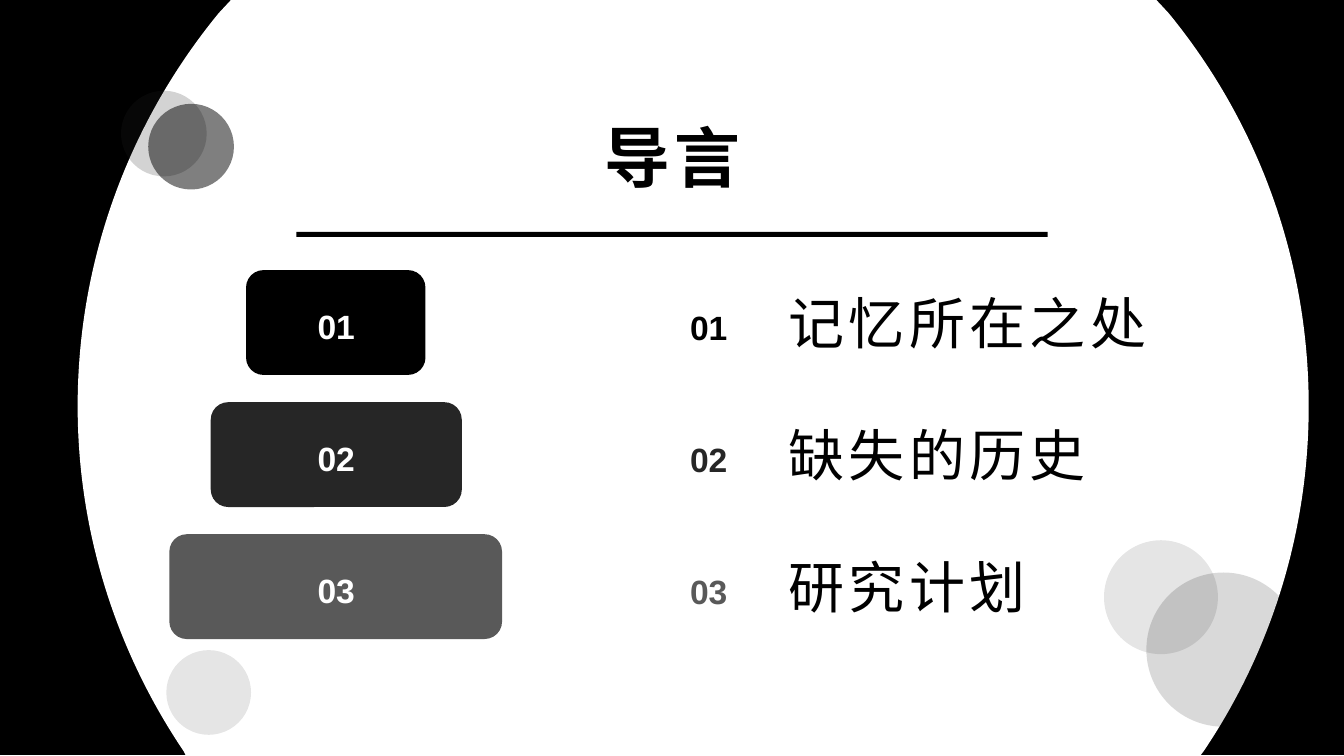
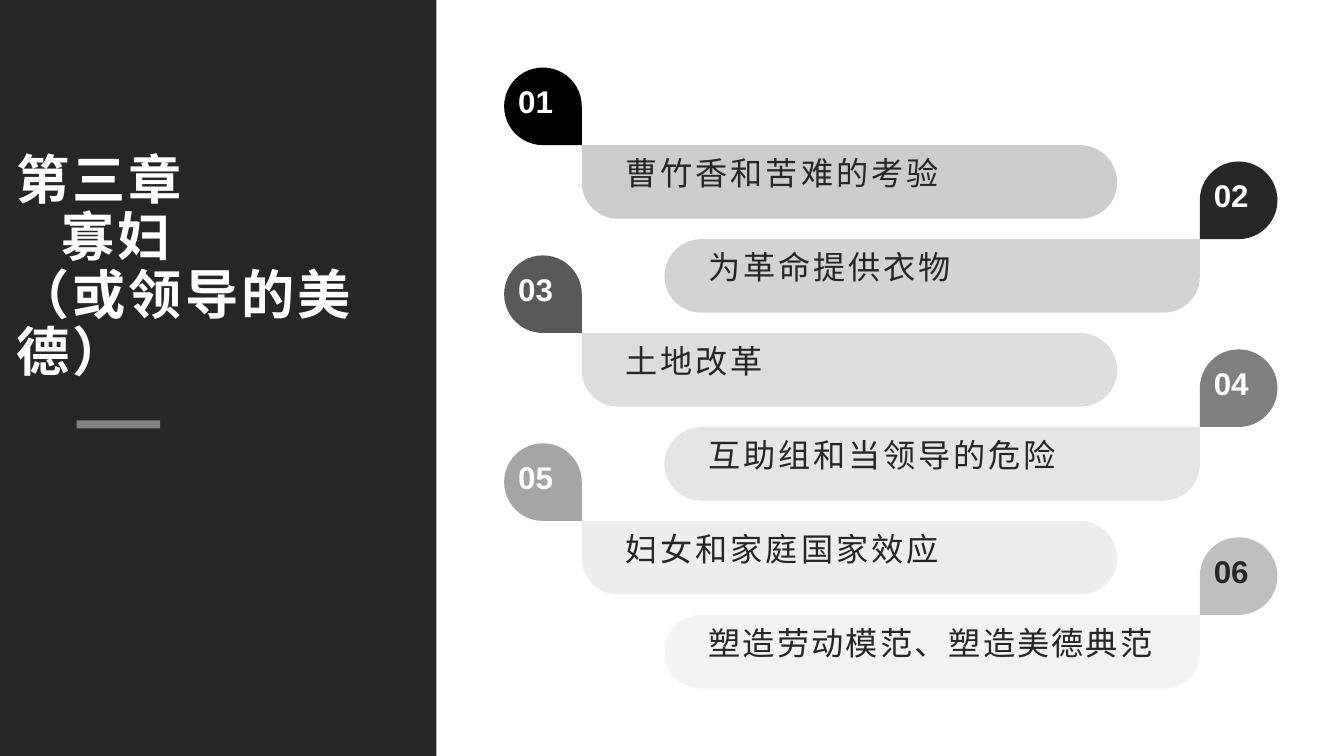
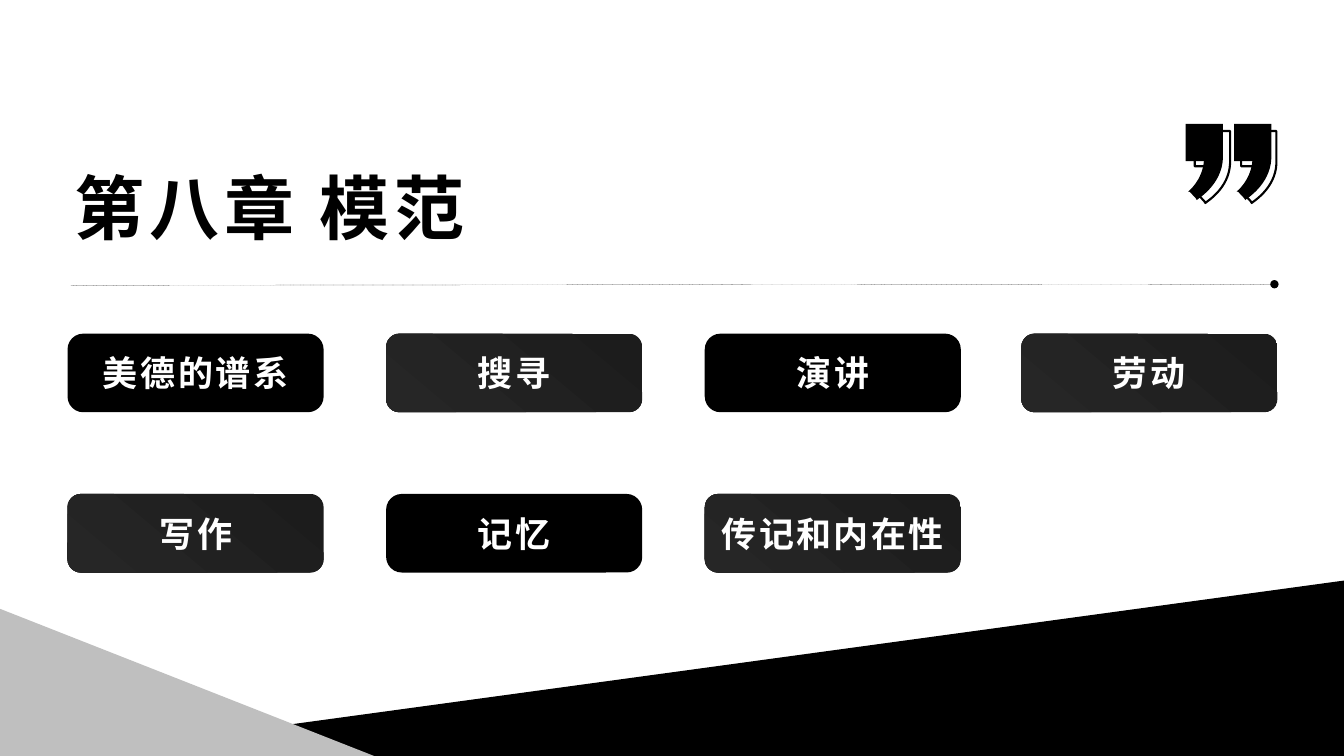
from lxml import etree
from pptx import Presentation
from pptx import util as u
from pptx.dml.color import RGBColor
from pptx.enum import shapes as s
from pptx.enum import text as t
from pptx.oxml.ns import qn

# Shared style
BLACK, DARK, MID, WHITE, SILVER = "000000", "262626", "595959", "FFFFFF", "BFBFBF"
LATIN, HAN = "Arial", "Noto Sans CJK SC"
TITLE = dict(font=HAN, bold=True, inset=(0.07, 0.03))
NUMBER = dict(bold=True)
KIND, ANCHOR, ALIGN = s.MSO_SHAPE, t.MSO_ANCHOR, t.PP_ALIGN

# Content: introduction (label, text, colour, block left, block width)
INTRO = [
    ("01", "记忆所在之处", BLACK, 2.44, 1.78),
    ("02", "缺失的历史", DARK, 2.09, 2.49),
    ("03", "研究计划", MID, 1.68, 3.30),
]
DISC = [("M", 2.3, -0.01), ("L", 11.46, -0.01), ("L", 11.59, 0.13),
        ("C", 12.46, 1.19, 12.98, 2.55, 12.98, 4.03),
        ("C", 12.98, 5.29, 12.6, 6.47, 11.94, 7.45), ("L", 11.91, 7.49),
        ("L", 1.84, 7.49), ("L", 1.82, 7.45),
        ("C", 1.16, 6.47, 0.77, 5.29, 0.77, 4.03),
        ("C", 0.77, 2.55, 1.3, 1.19, 2.17, 0.13)]
# Bubbles: left, top, diameter, colour, opacity
BUBBLES = [(1.2, 0.9, 0.85, DARK, 20), (1.47, 1.03, 0.85, BLACK, 50),
           (1.65, 6.45, 0.84, BLACK, 10), (11.37, 5.68, 1.53, BLACK, 15),
           (10.95, 5.36, 1.13, BLACK, 10)]

# Content: chapter three (text, colour, number colour, letter spacing)
CHAPTER_THREE = ["第三章", "寡妇", "（或领导的美德）"]
SECTIONS = [
    ("曹竹香和苦难的考验", BLACK, WHITE, 2),
    ("为革命提供衣物", DARK, WHITE, 2),
    ("土地改革", MID, WHITE, 2),
    ("互助组和当领导的危险", "7F7F7F", WHITE, 2),
    ("妇女和家庭国家效应", "A5A5A5", WHITE, 2),
    ("塑造劳动模范、塑造美德典范", SILVER, DARK, 1.5),
]
BAR_WIDTH = 5.31
BAR = [("M", 0, 0), ("L", 4.94, 0), ("C", 5.15, 0, 5.31, 0.17, 5.31, 0.37),
       ("C", 5.31, 0.57, 5.15, 0.73, 4.94, 0.73), ("L", 0.36, 0.73),
       ("C", 0.16, 0.73, 0, 0.57, 0, 0.37)]

# Content: chapter eight (text, letter spacing, plain black)
TOPICS = [
    [("美德的谱系", 2.1, True), ("搜寻", 2.2, False),
     ("演讲", 2.1, True), ("劳动", 2.1, False)],
    [("写作", 2.2, False), ("记忆", 2.1, True), ("传记和内在性", 1.7, False)],
]
TOPIC_LEFTS = [0.67, 3.83, 6.99, 10.13]
# Quotation mark, in units of its width
QUOTE = [("M", 0.3, 2.04), ("L", 0.27, 1.99),
         ("C", 0.22, 1.93, 0.16, 1.88, 0.11, 1.82), ("L", 0.07, 1.81),
         ("C", 0.07, 1.81, 0.44, 1.53, 0.49, 1), ("L", 0, 1), ("L", 0, 0),
         ("L", 1, 0), ("L", 1, 0.92), ("C", 0.97, 1.65, 0.3, 2.02, 0.3, 2.04)]


def rgb(color):
    return RGBColor.from_string(color)


def paint(shape, color, opacity=100):
    shape.shadow.inherit = False
    shape.line.fill.background()
    shape.fill.solid()
    shape.fill.fore_color.rgb = rgb(color)
    if opacity < 100:
        node = next(shape._element.spPr.iter(qn("a:srgbClr")))
        etree.SubElement(node, qn("a:alpha")).set("val", str(opacity * 1000))
    return shape


def add_block(parent, kind, at, color, opacity=100):
    shape = parent.shapes.add_shape(kind, *map(u.Inches, at))
    return paint(shape, color, opacity)


def trace(parent, outline, left=0, top=0, scale_x=1, scale_y=1):
    """Closed outline from M, L and C steps, where C is a Bezier curve."""
    points = [(u.Inches(left + x * scale_x), u.Inches(top + y * scale_y))
              for _, *values in outline
              for x, y in zip(values[::2], values[1::2])]
    builder = parent.shapes.build_freeform(*points[0])
    builder.add_line_segments(points[1:], close=True)
    shape = builder.convert_to_shape()
    shape.shadow.inherit = False
    # Each curve gathers the three points that were laid down as lines
    lines = iter(list(shape._element.spPr.iter(qn("a:lnTo"))))
    for kind, *_ in outline[1:]:
        first = next(lines)
        if kind == "C":
            first.tag = qn("a:cubicBezTo")
            for _ in range(2):
                extra = next(lines)
                first.append(extra[0])
                extra.getparent().remove(extra)
    return shape


def write(shape, lines, size, color, font=LATIN, bold=False, spacing=0,
          align=ALIGN.LEFT, anchor=ANCHOR.TOP, inset=(0.1, 0.05),
          leading=None, after=None):
    frame = shape.text_frame
    frame.word_wrap = True
    frame.vertical_anchor = anchor
    frame.margin_left = frame.margin_right = u.Inches(inset[0])
    frame.margin_top = frame.margin_bottom = u.Inches(inset[1])
    frame.text = "\n".join(lines)
    for para in frame.paragraphs:
        para.alignment = align
        if leading:
            para.line_spacing = leading
        if after:
            para.space_after = u.Pt(after)
        for span in para.runs:
            span.font.size, span.font.bold = u.Pt(size), bold
            span.font.name = font
            span.font.color.rgb = rgb(color)
            props = span.font._element
            etree.SubElement(props, qn("a:ea")).set("typeface", HAN)
            if spacing:
                props.set("spc", str(round(spacing * 100)))
    return frame


def add_text(page, at, lines, size, color, **style):
    box = page.shapes.add_textbox(*map(u.Inches, at))
    return write(box, lines, size, color, **style)


def build_intro(page):
    add_block(page, KIND.RECTANGLE, (0, -0.01, 13.33, 7.5), BLACK)
    paint(trace(page, DISC), WHITE)
    for left, top, size, color, opacity in BUBBLES:
        add_block(page, KIND.OVAL, (left, top, size, size), color, opacity)
    add_block(page, KIND.RECTANGLE, (2.94, 2.3, 7.45, 0.05), BLACK)
    add_text(page, (1.67, 1.17, 10, 0.85), ["导言"], 47, BLACK, spacing=3.1,
             align=ALIGN.CENTER, anchor=ANCHOR.MIDDLE, leading=0.9, **TITLE)
    # Steps on the left, numbered list on the right
    label = dict(align=ALIGN.CENTER, anchor=ANCHOR.MIDDLE, leading=1.2, **NUMBER)
    for row, (number, words, color, left, width) in enumerate(INTRO):
        top = 2.68 + 1.31 * row
        add_block(page, KIND.ROUNDED_RECTANGLE, (left, top, width, 1.04), color)
        add_text(page, (2.87, top + 0.18, 0.93, 0.67), [number], 24, WHITE, **label)
        add_text(page, (6.63, top + 0.19, 0.8, 0.66), [number], 24, color, **label)
        add_text(page, (7.72, top + 0.06, 3.94, 0.91), [words], 40, BLACK,
                 spacing=3.2, anchor=ANCHOR.MIDDLE, after=8)


def build_chapter_three(page):
    add_block(page, KIND.RECTANGLE, (0, 0, 4.33, 7.5), DARK)
    frame = add_text(page, (0.09, 1.33, 4.14, 2.5), CHAPTER_THREE, 38, WHITE,
                     spacing=2.2, anchor=ANCHOR.BOTTOM, leading=0.9, **TITLE)
    frame.paragraphs[1]._p.get_or_add_pPr().set("indent", str(u.Inches(0.45)))
    # Bars alternate between a left and a right drop
    drop, pitch = 0.77, (6.1 - 1.44) / 5
    for row, (words, color, ink, spacing) in enumerate(SECTIONS):
        top, on_right = 1.44 + pitch * row, row % 2
        bar_left, drop_left = (6.59, 11.9) if on_right else (5.77, 5)
        origin, flip = (bar_left + BAR_WIDTH, -1) if on_right else (bar_left, 1)
        paint(trace(page, BAR, origin, top, flip), color, 20)
        add_text(page, (bar_left + 0.34, top + 0.03, 4.66, 0.67), [words], 23,
                 DARK, spacing=spacing, after=8)
        tear = add_block(page, KIND.TEAR, (drop_left, top - drop, drop, drop), color)
        tear.rotation = 180 if on_right else 90
        add_text(page, (drop_left + 0.04, top - drop + 0.1, 0.68, 0.58),
                 [f"{row + 1:02}"], 22.4, ink, **NUMBER)
    add_block(page, KIND.RECTANGLE, (0.76, 4.17, 0.83, 0.08), "808080")


def build_chapter_eight(page):
    add_text(page, (0.67, 1.17, 10.67, 1.33), ["第八章 模范"], 50, BLACK,
             spacing=3.4, anchor=ANCHOR.BOTTOM, **TITLE)
    # Topic grid
    for row, topics in enumerate(TOPICS):
        for left, (words, spacing, plain) in zip(TOPIC_LEFTS, topics):
            at = (left, 3.31 + 1.59 * row, 2.54, 0.78)
            card = add_block(page, KIND.ROUNDED_RECTANGLE, at, BLACK)
            card.adjustments[0] = 0.2 if plain else 0.17
            if not plain:
                card.fill.gradient()
                card.fill.gradient_angle = 230
                for stop, color in zip(card.fill.gradient_stops, ("1C1C1C", DARK)):
                    stop.color.rgb = rgb(color)
            write(card, [words], 25, WHITE, bold=True, spacing=spacing, after=8,
                  align=ALIGN.CENTER, anchor=ANCHOR.MIDDLE, inset=(0.1, 0.1))
    # Corner wedges
    wedge = add_block(page, KIND.RIGHT_TRIANGLE, (0.59, 5.76, 12.74, 1.74), BLACK)
    wedge._element.spPr.find(qn("a:xfrm")).set("flipH", "1")
    add_block(page, KIND.RIGHT_TRIANGLE, (0, 6.04, 3.71, 1.46), SILVER)
    # Dashed rule with a dot at its right end
    rule = page.shapes.add_connector(s.MSO_CONNECTOR.STRAIGHT,
                                     *map(u.Inches, (12.64, 2.82, 0.7, 2.83)))
    rule.line.color.rgb = rgb(BLACK)
    rule.line.width = u.Pt(0.1)
    line = rule.line._get_or_add_ln()
    etree.SubElement(line, qn("a:prstDash")).set("val", "dash")
    etree.SubElement(line, qn("a:headEnd")).set("type", "oval")
    etree.SubElement(rule._element.spPr, qn("a:effectLst"))
    # Closing quotation marks: outlines behind, solid in front
    marks = page.shapes.add_group_shape()
    for left in (12.31, 11.85):
        mark = trace(marks, QUOTE, left, 1.3, 0.35, 0.35)
        mark.fill.background()
        mark.line.color.rgb = rgb(BLACK)
        mark.line.width = u.Pt(1.5)
    for left in (12.24, 11.76):
        paint(trace(marks, QUOTE, left, 1.23, 0.37, 0.37), BLACK)


def main():
    deck = Presentation()
    deck.slide_width, deck.slide_height = u.Inches(13.33), u.Inches(7.5)
    for build in (build_intro, build_chapter_three, build_chapter_eight):
        build(deck.slides.add_slide(deck.slide_layouts[6]))
    deck.save("out.pptx")


if __name__ == "__main__":
    main()
